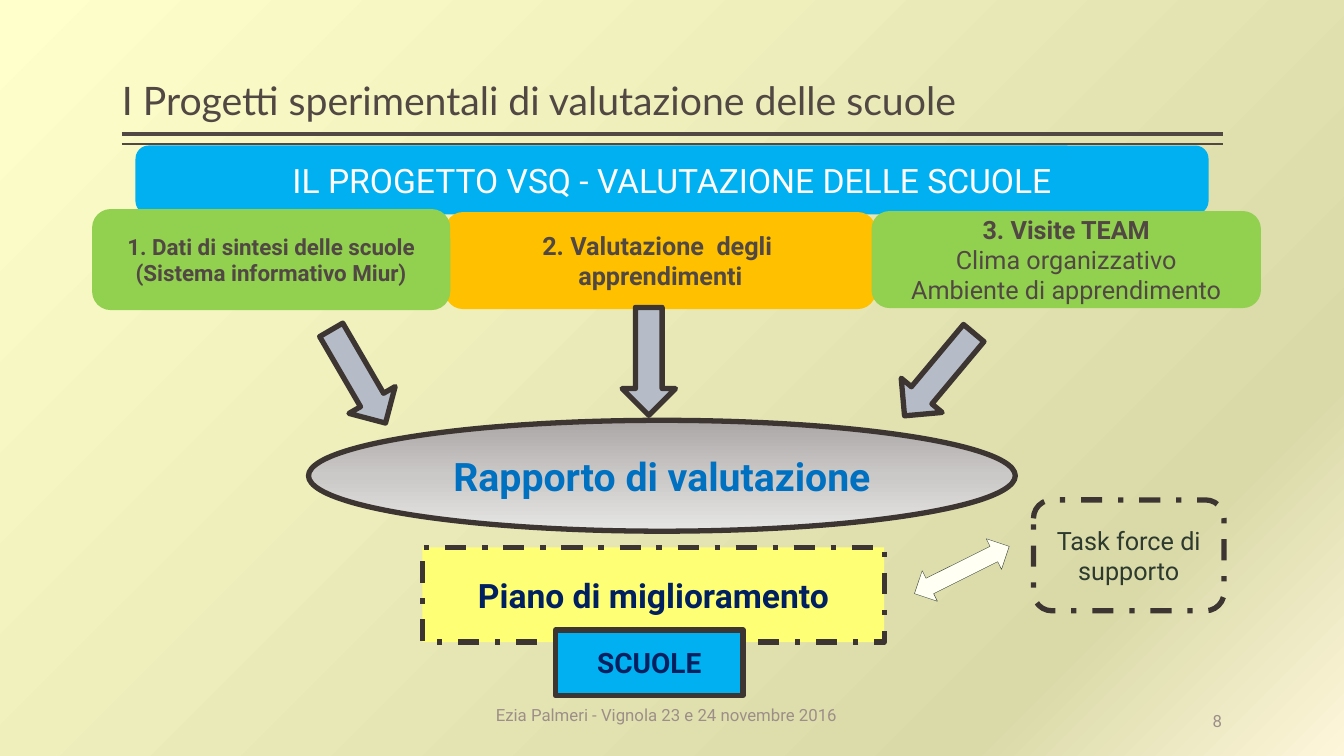
from dataclasses import dataclass

from lxml.etree import SubElement
from pptx import Presentation
from pptx.dml.color import RGBColor
from pptx.enum.dml import MSO_LINE
from pptx.enum.shapes import MSO_CONNECTOR, MSO_SHAPE
from pptx.enum.text import MSO_ANCHOR, PP_ALIGN
from pptx.oxml.ns import qn
from pptx.util import Inches, Pt


@dataclass(frozen=True)
class Theme:
    """Colours, fonts and sizes of the deck."""
    ink: str = "514843"
    muted: str = "9D8F88"
    outline: str = "3C3532"
    forest: str = "2E3A2E"
    white: str = "FFFFFF"
    sky: str = "00B0F0"
    amber: str = "FFC000"
    green: str = "92D050"
    steel: str = "B6BCC7"
    yellow: str = "FFFF76"
    ivory: str = "FFFFF3"
    blue: str = "0070C0"
    navy: str = "002060"
    backdrop: tuple = ((0, "FEF6DA"), (18, "DADAA9"), (100, "FFFFCC"))
    silver: tuple = ((0, "AAA6A5"), (50, "CBC9C8"), (100, "E5E5E4"))
    heading_font: str = "Lato"
    body_font: str = "Roboto"
    heading: float = 28
    large: float = 24
    medium: float = 20
    body: float = 18
    compact: float = 16
    small: float = 12
    border: float = 3.78


THEME = Theme()


def write_text(frame, text, size=THEME.body, color=THEME.ink, font=THEME.body_font,
               bold=False, bold_lines=None, align=PP_ALIGN.CENTER,
               anchor=MSO_ANCHOR.MIDDLE, spacing=None):
    """Write each line as a paragraph; bold_lines limits bold to the first lines."""
    frame.word_wrap = True
    frame.vertical_anchor = anchor
    for index, line in enumerate(text.split("\n")):
        para = frame.add_paragraph() if index else frame.paragraphs[0]
        para.alignment = align
        para.line_spacing = spacing
        span = para.add_run()
        span.text = line
        span.font.size = Pt(size)
        span.font.name = font
        span.font.bold = bold and (bold_lines is None or index < bold_lines)
        span.font.color.rgb = RGBColor.from_string(color)


def paint_gradient(fill, owner, stops, angle):
    """Give a fill the stops of a gradient at a counter-clockwise angle."""
    fill.gradient()
    fill.gradient_angle = angle
    stop_list = next(owner.iter(qn("a:gsLst")))
    stop_list.clear()
    for position, color in stops:
        stop = SubElement(stop_list, qn("a:gs"), pos=str(position * 1000))
        SubElement(stop, qn("a:srgbClr"), val=color)


def add_label(page, box, text, **style):
    """Place a text box without side margins."""
    frame = page.shapes.add_textbox(*map(Inches, box)).text_frame
    frame.margin_left = frame.margin_right = 0
    write_text(frame, text, **style)


def add_figure(page, kind, box, fill=None, line=THEME.outline, width=THEME.border,
               dash=None, rotation=0, text="", **style):
    """Place a preset shape with its fill, outline and text."""
    shape = page.shapes.add_shape(kind, *map(Inches, box))
    shape.shadow.inherit = False
    shape.rotation = rotation
    if fill is None:
        shape.fill.background()
    elif isinstance(fill, tuple):
        paint_gradient(shape.fill, shape.element, fill, 270)
    else:
        shape.fill.solid()
        shape.fill.fore_color.rgb = RGBColor.from_string(fill)
    shape.line.color.rgb = RGBColor.from_string(line)
    shape.line.width = Pt(width)
    if dash:
        shape.line.dash_style = dash
    if text:
        write_text(shape.text_frame, text, **style)


def add_header(page, box):
    """Place the title and the double rule below it."""
    left, top, width, height = box
    add_label(page, box, "I Progetti sperimentali di valutazione delle scuole",
              size=THEME.heading, font=THEME.heading_font, align=PP_ALIGN.LEFT,
              anchor=MSO_ANCHOR.BOTTOM, spacing=0.9)
    for gap, weight in ((0.05, 3), (0.15, 1)):
        y = Inches(top + height + gap)
        rule = page.shapes.add_connector(
            MSO_CONNECTOR.STRAIGHT, Inches(left), y, Inches(left + width), y)
        rule.line.color.rgb = RGBColor.from_string(THEME.ink)
        rule.line.width = Pt(weight)
        SubElement(rule.element.spPr, qn("a:effectLst"))


def add_sources(page, box):
    """Place the project banner and its three sources of evidence."""
    left, top, _, _ = box
    cards = (
        ((0.43, 0, 10.59, 0.63), THEME.sky, "IL PROGETTO VSQ - VALUTAZIONE DELLE SCUOLE",
         dict(size=THEME.large, color=THEME.white)),
        ((3.5, 0.66, 4.22, 0.91), THEME.amber, "2. Valutazione  degli  apprendimenti",
         dict(bold=True)),
        ((0, 0.63, 3.5, 0.95), THEME.green,
         "1. Dati di sintesi delle scuole\n(Sistema informativo Miur)",
         dict(size=THEME.compact, bold=True)),
        ((7.73, 0.65, 3.81, 0.91), THEME.green,
         "3. Visite TEAM\nClima organizzativo\nAmbiente di apprendimento",
         dict(bold=True, bold_lines=1)),
    )
    for (x, y, width, height), color, text, style in cards:
        add_figure(page, MSO_SHAPE.ROUNDED_RECTANGLE, (left + x, top + y, width, height),
                   fill=color, line=color, text=text, **style)


def add_report(page, box):
    """Place the report ellipse and the three arrows that lead to it."""
    left, top, width, height = box
    for x, y, rotation in ((5.99, -0.99, 39.9), (3.11, -1.12, 0), (0.23, -0.97, 329.8)):
        add_figure(page, MSO_SHAPE.DOWN_ARROW, (left + x, top + y, 0.53, 1.07),
                   fill=THEME.steel, rotation=rotation)
    add_figure(page, MSO_SHAPE.OVAL, box, fill=THEME.silver,
               text="Rapporto di valutazione", size=THEME.heading,
               color=THEME.blue, bold=True)


def add_improvement(page, box):
    """Place the improvement plan, the schools and the support task force."""
    left, top, width, height = box
    add_figure(page, MSO_SHAPE.RECTANGLE, box, fill=THEME.yellow, dash=MSO_LINE.DASH_DOT,
               text="Piano di miglioramento", size=THEME.large,
               color=THEME.navy, bold=True)
    add_figure(page, MSO_SHAPE.RECTANGLE, (left + 1.32, top + 0.82, 1.86, 0.65),
               fill=THEME.sky, text="SCUOLE", size=THEME.medium,
               color=THEME.navy, bold=True)
    add_figure(page, MSO_SHAPE.ROUNDED_RECTANGLE, (left + 6.06, top - 0.47, 1.89, 1.1),
               dash=MSO_LINE.DASH_DOT, text="Task force di supporto", color=THEME.forest)
    add_figure(page, MSO_SHAPE.UP_DOWN_ARROW, (left + 5.18, top - 0.3, 0.34, 1.05),
               fill=THEME.ivory, line=THEME.forest, width=0.25, rotation=63.5)


def add_footer(page, box):
    """Place the event line and the page number."""
    left, top, width, height = box
    style = dict(size=THEME.small, color=THEME.muted)
    add_label(page, (left, top, 6.92, height),
              "Ezia Palmeri - Vignola 23 e 24 novembre 2016", **style)
    add_label(page, (left + width - 2, top + 0.06, 2, height), "8",
              align=PP_ALIGN.RIGHT, **style)


def main():
    """Build the deck and save it."""
    deck = Presentation()
    deck.slide_width, deck.slide_height = Inches(13.33), Inches(7.5)
    page = deck.slides.add_slide(deck.slide_layouts[6])
    paint_gradient(page.background.fill, page.element, THEME.backdrop, 135)
    add_header(page, (1.21, 0.08, 10.92, 1.2))
    add_footer(page, (3.15, 6.89, 8.97, 0.4))
    add_sources(page, (0.94, 1.47, 11.54, 1.58))
    add_report(page, (3.06, 4.17, 7.01, 1.1))
    add_improvement(page, (4.19, 5.43, 4.58, 0.94))
    deck.save("out.pptx")


if __name__ == "__main__":
    main()
